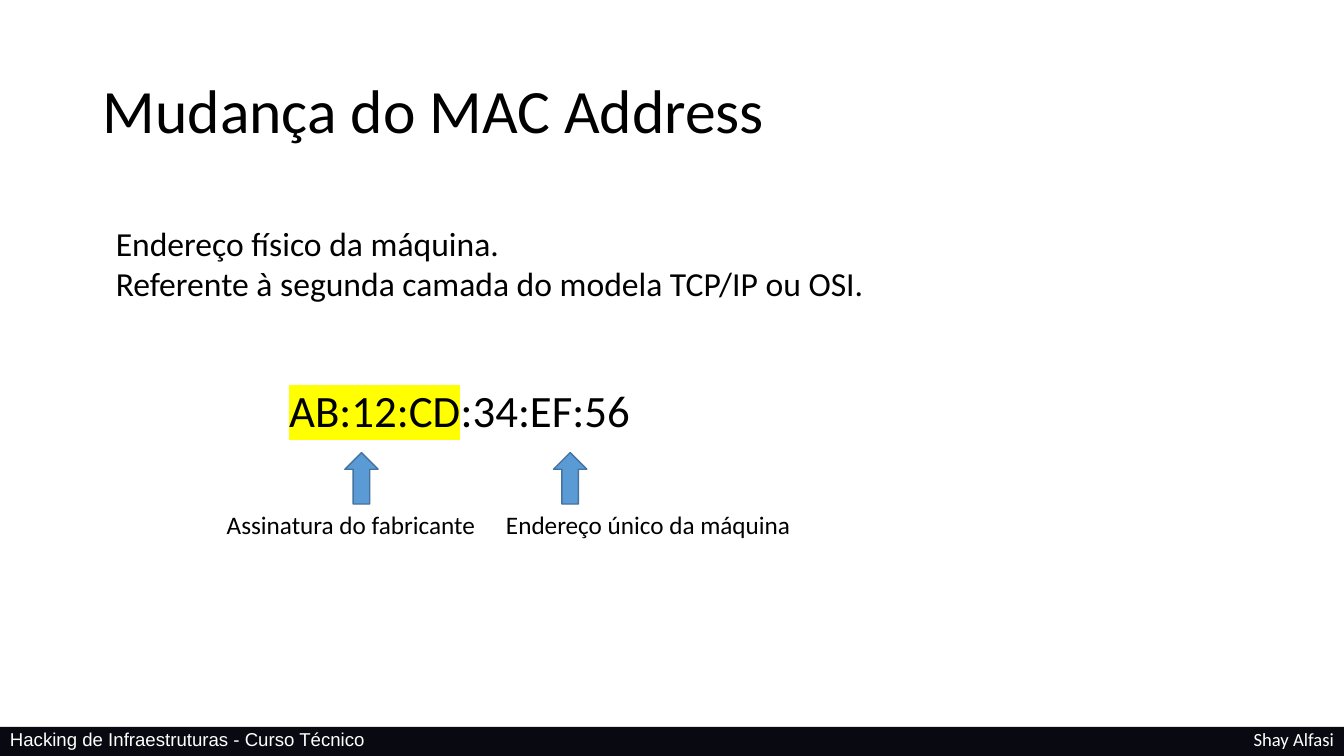
from lxml import etree
from pptx import Presentation
from pptx import util as u
from pptx.dml.color import RGBColor
from pptx.enum import shapes, text
from pptx.oxml import ns

COLORS = {
    "bar": "090911",
    "white": "FFFFFF",
    "black": "000000",
    "arrow": "5B9BD5",
    "arrow_line": "43739E",
    "highlight": "FFFF00",
}


def color(name):
    """Return the named colour."""
    return RGBColor.from_string(COLORS[name])


def highlight(run, name):
    """Mark a coloured run with a highlight."""
    fill = run.font._element.find(ns.qn("a:solidFill"))
    mark = etree.Element(ns.qn("a:highlight"))
    etree.SubElement(mark, ns.qn("a:srgbClr")).set("val", COLORS[name])
    fill.addnext(mark)


def add_text(slide, box, paragraphs, size, ink="black", font="Calibri",
             align=text.PP_ALIGN.LEFT, anchor=text.MSO_ANCHOR.TOP, spacing=1.0):
    """Place paragraphs, each a list of (words, highlight) runs, in a box."""
    shape = slide.shapes.add_textbox(*map(u.Inches, box))
    frame = shape.text_frame
    frame.word_wrap = True
    frame.vertical_anchor = anchor
    for index, runs in enumerate(paragraphs):
        paragraph = frame.paragraphs[0] if index == 0 else frame.add_paragraph()
        paragraph.alignment = align
        paragraph.line_spacing = spacing
        for words, mark in runs:
            run = paragraph.add_run()
            run.text = words
            run.font.size = u.Pt(size)
            run.font.name = font
            run.font.color.rgb = color(ink)
            if mark:
                highlight(run, mark)


def add_shape(slide, kind, box, fill, line=None):
    """Place a filled preset shape."""
    shape = slide.shapes.add_shape(kind, *map(u.Inches, box))
    shape.shadow.inherit = False
    shape.fill.solid()
    shape.fill.fore_color.rgb = color(fill)
    if line:
        shape.line.color.rgb = color(line)
        shape.line.width = u.Pt(1)
    else:
        shape.line.fill.background()


def add_footer(slide, left, top, width, height):
    """Draw the dark bar with the course name and the author."""
    add_shape(slide, shapes.MSO_SHAPE.RECTANGLE, (left, top, width, height), "bar")
    text_top = top - 0.04
    add_text(slide, (left, text_top, 8.35, 0.33),
             [[("Hacking de Infraestruturas - Curso Técnico", None)]],
             13.3, "white", "Arial")
    add_text(slide, (left + width - 6.4, text_top, 6.4, 0.33),
             [[("Shay Alfasi", None)]], 13.3, "white", align=text.PP_ALIGN.RIGHT)


def add_heading(slide, left, top, width, height):
    """Write the title and the introduction below it."""
    add_text(slide, (left, top, width, height), [[("Mudança do MAC Address", None)]],
             44, anchor=text.MSO_ANCHOR.MIDDLE, spacing=0.9)
    add_text(slide, (left + 0.13, top + 1.76, 8.33, 0.91),
             [[("Endereço físico da máquina.", None)],
              [("Referente à segunda camada do modela TCP/IP ou OSI.", None)]], 24)


def add_address(slide, left, top, width, height):
    """Show the address with an arrow and a label for each half."""
    add_text(slide, (left, top, width, height),
             [[("AB:12:CD", "highlight"), (":34:EF:56", None)]], 32)
    halves = [
        ("Assinatura do fabricante", -0.62, 2.71, 0.65),
        ("Endereço único da máquina", 2.15, 3.55, 2.72),
    ]
    for label, label_left, label_width, arrow_left in halves:
        add_text(slide, (left + label_left, top + 1.25, label_width, 0.4),
                 [[(label, None)]], 18)
        add_shape(slide, shapes.MSO_SHAPE.UP_ARROW,
                  (left + arrow_left, top + 0.74, 0.33, 0.51), "arrow", "arrow_line")


def main():
    """Build and save the slide."""
    presentation = Presentation()
    presentation.slide_width = u.Inches(13.33)
    presentation.slide_height = u.Inches(7.5)
    slide = presentation.slides.add_slide(presentation.slide_layouts[6])
    add_footer(slide, 0, 7.21, 13.33, 0.29)
    add_heading(slide, 0.92, 0.4, 11.5, 1.45)
    add_address(slide, 2.77, 3.75, 6.05, 0.64)
    presentation.save("out.pptx")


if __name__ == "__main__":
    main()
